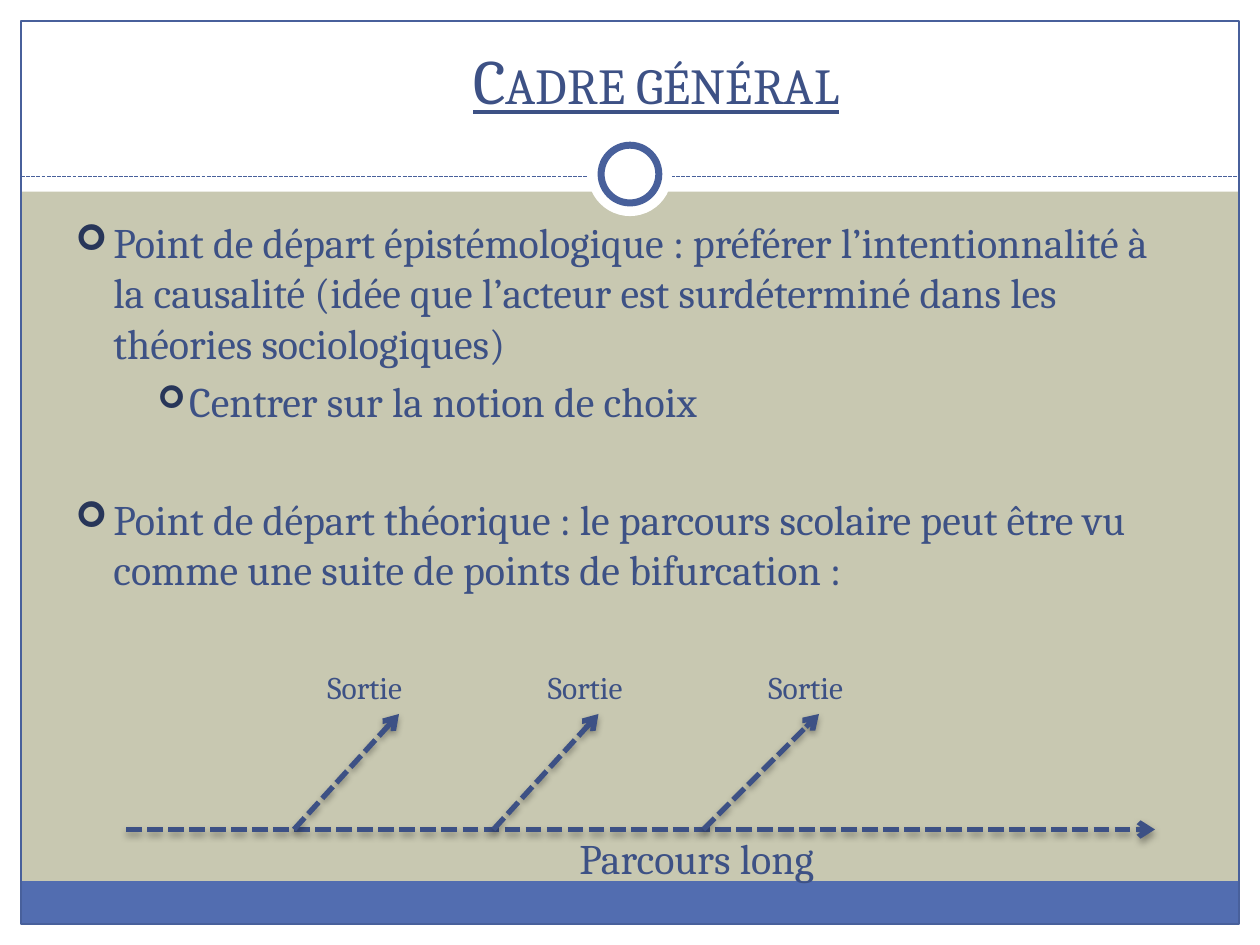
from pptx import Presentation
from pptx.dml.color import RGBColor
from pptx.enum.dml import MSO_LINE
from pptx.enum.shapes import MSO_CONNECTOR, MSO_SHAPE
from pptx.enum.text import MSO_ANCHOR, MSO_AUTO_SIZE, PP_ALIGN
from pptx.oxml import parse_xml
from pptx.oxml.ns import nsdecls
from pptx.util import Pt

RECT, OVAL = MSO_SHAPE.RECTANGLE, MSO_SHAPE.OVAL
STRAIGHT, DASH = MSO_CONNECTOR.STRAIGHT, MSO_LINE.SQUARE_DOT
TOP, BOTTOM = MSO_ANCHOR.TOP, MSO_ANCHOR.BOTTOM
CENTER, LEFT = PP_ALIGN.CENTER, PP_ALIGN.LEFT
FIXED = MSO_AUTO_SIZE.NONE

FONT = "Cambria"
WHITE, SAND, BLUE = "FFFFFF", "C8C8B1", "526DB0"
EDGE, INK, MARK = "48609B", "3D5185", "283659"
WIDE, HIGH, RIM = 720, 540, 12
BASE = 474  # height of the long path

# text, level, indent, bullet size in percent, space before
POINTS = [
    ("Point de départ épistémologique : préférer l’intentionnalité à la causalité "
     "(idée que l’acteur est surdéterminé dans les théories sociologiques)",
     0, 21.6, 85, 4.8),
    ("Centrer sur la notion de choix", 1, 18, 75, 4.8),
    ("Point de départ théorique : le parcours scolaire peut être vu comme une "
     "suite de points de bifurcation :", 0, 21.6, 85, 38.4),
]
MARGINS = [21.6, 64.8]

# branch start, branch end, label left
EXITS = [(168, 228, 180), (282, 342, 306), (402, 468, 432)]

SHADOW = (f'<a:effectLst {nsdecls("a")}><a:outerShdw blurRad="50800" dist="25400" '
          'dir="5400000" rotWithShape="0"><a:srgbClr val="000000">'
          '<a:alpha val="35000"/></a:srgbClr></a:outerShdw></a:effectLst>')


def paint(target, tint):
    """Give a fill a solid colour."""
    target.solid()
    target.fore_color.rgb = RGBColor.from_string(tint)


def place(shape, x, y, w, h):
    shape.left, shape.top, shape.width, shape.height = map(Pt, (x, y, w, h))


def style(para, size):
    for run in para.runs:
        run.font.name, run.font.size = FONT, Pt(size)
        paint(run.font.fill, INK)


def add_box(slide, kind, x, y, w, h, fill=None, edge=None, width=0.75):
    box = slide.shapes.add_shape(kind, Pt(x), Pt(y), Pt(w), Pt(h))
    box.shadow.inherit = False
    if fill:
        paint(box.fill, fill)
    else:
        box.fill.background()
    if edge:
        paint(box.line.fill, edge)
        box.line.width = Pt(width)
    else:
        box.line.fill.background()


def add_line(slide, x1, y1, x2, y2, tint, width, arrow=False):
    link = slide.shapes.add_connector(STRAIGHT, Pt(x1), Pt(y1), Pt(x2), Pt(y2))
    paint(link.line.fill, tint)
    link.line.width = Pt(width)
    link.line.dash_style = DASH
    effect = SHADOW if arrow else f'<a:effectLst {nsdecls("a")}/>'
    link.element.spPr.append(parse_xml(effect))
    if arrow:
        link.line._get_or_add_ln().append(
            parse_xml(f'<a:tailEnd {nsdecls("a")} type="arrow"/>'))


def add_label(slide, text, x, y, w, h, size):
    box = slide.shapes.add_textbox(Pt(x), Pt(y), Pt(w), Pt(h))
    frame = box.text_frame
    frame.text = text
    frame.word_wrap = False
    style(frame.paragraphs[0], size)


def add_bullet(para, margin, indent, percent):
    props = para._p.get_or_add_pPr()
    props.set("marL", str(Pt(margin)))
    props.set("indent", str(-Pt(indent)))
    for part in (f'buClr {nsdecls("a")}><a:srgbClr val="{MARK}"/></a:buClr>',
                 f'buSzPct {nsdecls("a")} val="{percent * 1000}"/>',
                 f'buFont {nsdecls("a")} typeface="Wingdings"/>',
                 f'buChar {nsdecls("a")} char="➢"/>'):
        props.append(parse_xml("<a:" + part))


def draw_frame(slide):
    paint(slide.background.fill, SAND)
    # White margins
    add_box(slide, RECT, 0, HIGH - RIM, WIDE, RIM, WHITE)
    add_box(slide, RECT, 0, 0, WIDE, 109.5, WHITE)
    for x in (0, WIDE - RIM):
        add_box(slide, RECT, x, 0, RIM, HIGH, WHITE)
    # Footer band, outline and divider
    add_box(slide, RECT, RIM, 503.5, WIDE - 2 * RIM, 24.5, BLUE)
    add_box(slide, RECT, RIM, RIM, WIDE - 2 * RIM, HIGH - 2 * RIM, edge=EDGE)
    add_line(slide, RIM, 100.8, WIDE - RIM, 100.8, EDGE, 0.75)
    # Ring
    add_box(slide, OVAL, 336, 75.5, 48, 48, WHITE)
    add_box(slide, OVAL, 343.5, 83, 33, 33, WHITE, EDGE, 4)


def fill_title(title):
    place(title, 78, 18, 594, 52.5)
    frame = title.text_frame
    frame.text = "Cadre général"
    frame.auto_size, frame.vertical_anchor = FIXED, BOTTOM
    para = frame.paragraphs[0]
    para.alignment = CENTER
    style(para, 36)
    font = para.runs[0].font
    font.underline = True
    para.runs[0]._r.get_or_add_rPr().set("cap", "small")


def fill_body(body):
    place(body, 36, 120, 648, 390)
    frame = body.text_frame
    frame.text = "\n".join(point[0] for point in POINTS)
    frame.auto_size, frame.vertical_anchor = FIXED, TOP
    for para, (_, level, indent, percent, gap) in zip(frame.paragraphs, POINTS):
        para.level, para.alignment = level, LEFT
        para.space_before = Pt(gap)
        add_bullet(para, MARGINS[level], indent, percent)
        style(para, 24)


def draw_paths(slide):
    add_line(slide, 72, BASE, 660, BASE, INK, 3, True)
    for start, end, left in EXITS:
        add_line(slide, start, BASE, end, 408, INK, 3, True)
        add_label(slide, "Sortie", left, 378, 62.5, 29, 18)
    add_label(slide, "Parcours long", 324, 472, 150, 36, 24)


def main():
    deck = Presentation()
    deck.slide_width, deck.slide_height = Pt(WIDE), Pt(HIGH)
    slide = deck.slides.add_slide(deck.slide_layouts[1])
    title, body = slide.placeholders
    draw_frame(slide)
    # Bring the text in front of the frame
    for holder in (title, body):
        holder.element.getparent().append(holder.element)
    fill_title(title)
    fill_body(body)
    draw_paths(slide)
    deck.save("out.pptx")


if __name__ == "__main__":
    main()
